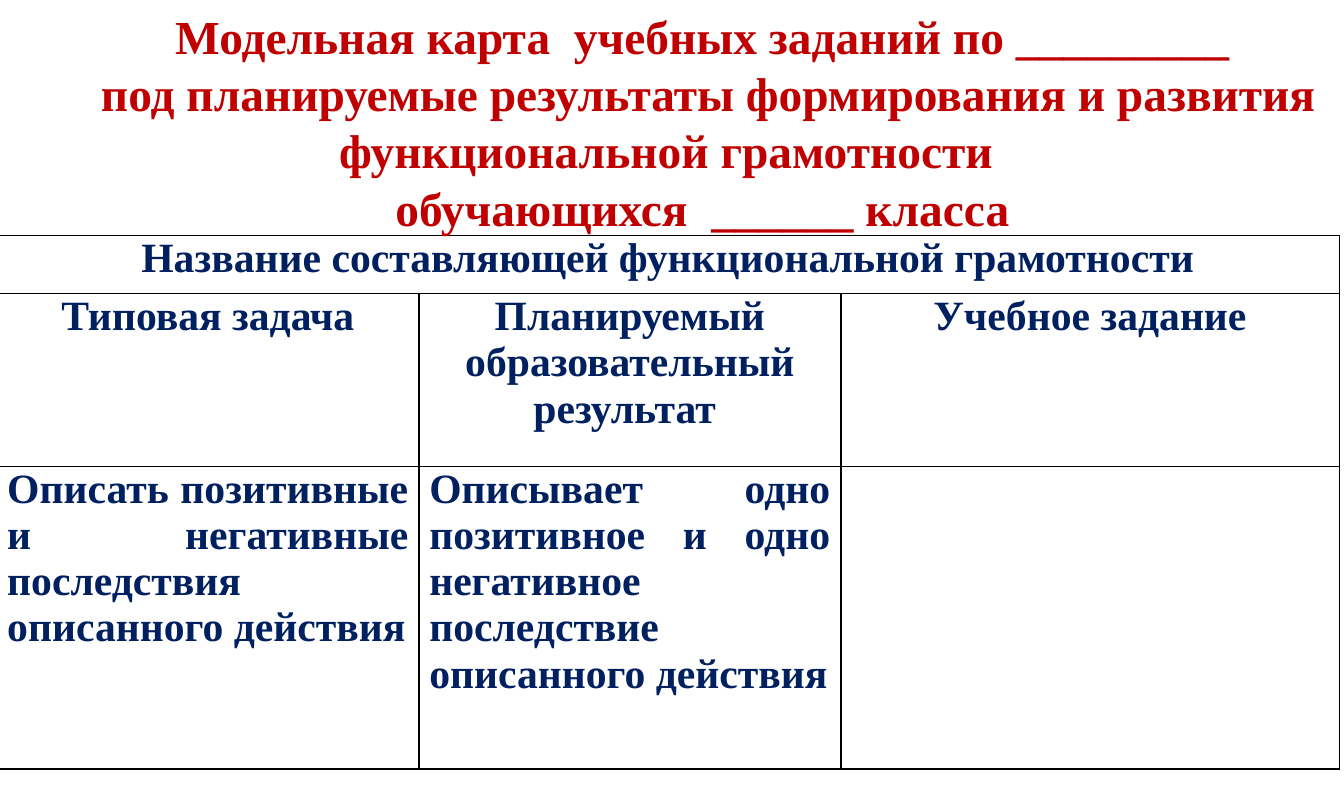
from dataclasses import dataclass

from lxml.etree import SubElement
from pptx import Presentation
from pptx.dml.color import RGBColor
from pptx.enum.text import MSO_ANCHOR as Anchor, MSO_AUTO_SIZE as AutoSize, PP_ALIGN as Align
from pptx.oxml.ns import qn
from pptx.slide import Slide
from pptx.table import _Cell as Cell
from pptx.text.text import TextFrame
from pptx.util import Emu, Pt

SCALE = 9144
SLIDE_WIDTH = Emu(11880850)
SLIDE_HEIGHT = Emu(7164388)
TITLE_ONLY = 5
FONT = "Times New Roman"
RED = RGBColor(0xC0, 0x00, 0x00)
NAVY = RGBColor(0x00, 0x20, 0x60)
BLACK = RGBColor(0x00, 0x00, 0x00)
WHITE = RGBColor(0xFF, 0xFF, 0xFF)

TITLE_LINES = (
    "Модельная карта  учебных заданий по _________",
    " под планируемые результаты формирования и развития функциональной грамотности ",
    "обучающихся  ______ класса",
)
COLUMN_WIDTHS = (408, 408, 482)


@dataclass(frozen=True)
class MapRow:
    height: int
    texts: tuple[str, ...]
    align: Align = Align.CENTER


MAP_ROWS = (
    MapRow(56, ("Название составляющей функциональной грамотности",)),
    MapRow(167, ("Типовая задача", "Планируемый образовательный результат ", "Учебное задание")),
    MapRow(
        293,
        (
            "Описать позитивные и негативные последствия описанного действия",
            "Описывает одно позитивное и одно негативное последствие  описанного действия",
        ),
        Align.JUSTIFY,
    ),
)


def px(length: int) -> int:
    return length * SCALE


def format_text(text_frame: TextFrame, size: int, color: RGBColor, align: Align) -> None:
    for paragraph in text_frame.paragraphs:
        paragraph.alignment = align
        for run in paragraph.runs:
            run.font.name = FONT
            run.font.size = Pt(size)
            run.font.bold = True
            run.font.color.rgb = color


def style_cell(cell: Cell) -> None:
    properties = cell._tc.get_or_add_tcPr()
    for side in ("lnL", "lnR", "lnT", "lnB"):
        line = SubElement(properties, qn(f"a:{side}"), w=str(Pt(1)))
        fill = SubElement(line, qn("a:solidFill"))
        SubElement(fill, qn("a:srgbClr"), val=str(BLACK))
    cell.fill.solid()
    cell.fill.fore_color.rgb = WHITE
    cell.margin_left = cell.margin_right = px(10)
    cell.margin_top = cell.margin_bottom = 0


def add_map_table(slide: Slide) -> None:
    height = sum(row.height for row in MAP_ROWS)
    table = slide.shapes.add_table(
        len(MAP_ROWS), len(COLUMN_WIDTHS), px(-3), px(228), px(sum(COLUMN_WIDTHS)), px(height)
    ).table
    table.first_row = table.horz_banding = False
    for column, width in zip(table.columns, COLUMN_WIDTHS):
        column.width = px(width)
    for row_index, map_row in enumerate(MAP_ROWS):
        table.rows[row_index].height = px(map_row.height)
        for column_index, text in enumerate(map_row.texts):
            cell = table.cell(row_index, column_index)
            cell.text_frame.text = text
            format_text(cell.text_frame, 29, NAVY, map_row.align)
    for cell in table.iter_cells():
        style_cell(cell)
    table.cell(0, 0).merge(table.cell(0, len(COLUMN_WIDTHS) - 1))


def place_title(slide: Slide) -> None:
    title = slide.shapes.title
    title.left, title.top, title.width, title.height = 0, 0, SLIDE_WIDTH, px(270)
    text_frame = title.text_frame
    text_frame.auto_size = AutoSize.NONE
    text_frame.word_wrap = True
    text_frame.vertical_anchor = Anchor.TOP
    text_frame.margin_left = text_frame.margin_right = px(12)
    text_frame.margin_top = text_frame.margin_bottom = px(6)
    text_frame.text = "\n".join(TITLE_LINES)
    format_text(text_frame, 33, RED, Align.CENTER)
    for paragraph in text_frame.paragraphs:
        paragraph.line_spacing = Pt(40)
        properties = paragraph._p.get_or_add_pPr()
        properties.set("marL", "0")
        properties.set("indent", str(px(59)))
    title.element.getparent().append(title.element)


def main() -> None:
    presentation = Presentation()
    presentation.slide_width = SLIDE_WIDTH
    presentation.slide_height = SLIDE_HEIGHT
    slide = presentation.slides.add_slide(presentation.slide_layouts[TITLE_ONLY])
    add_map_table(slide)
    place_title(slide)
    presentation.save("out.pptx")


if __name__ == "__main__":
    main()
